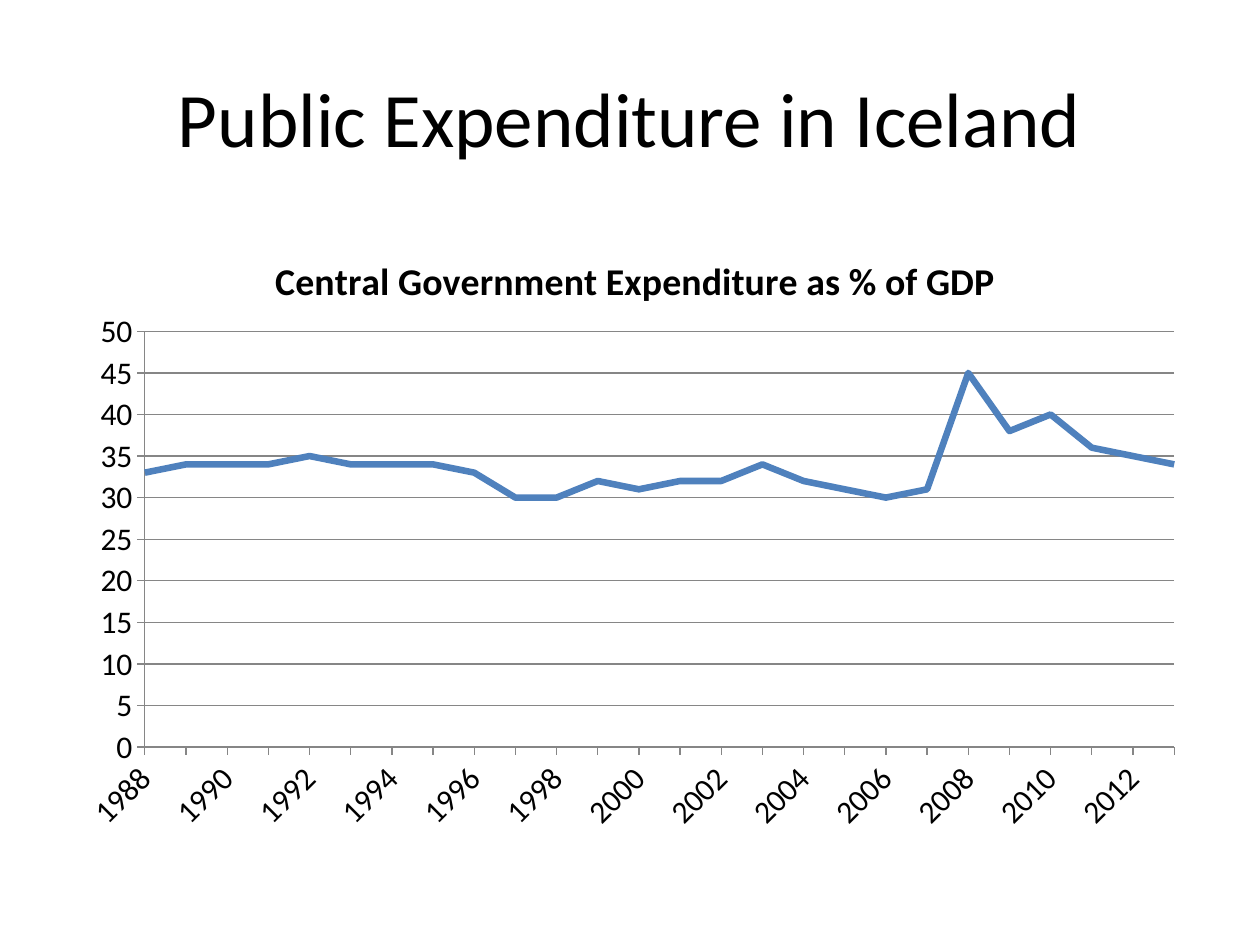
from pptx import Presentation
from pptx.chart.data import CategoryChartData
from pptx.dml.color import RGBColor
from pptx.enum.chart import XL_CHART_TYPE as ChartType, XL_TICK_MARK as Tick
from pptx.enum.text import MSO_ANCHOR, PP_ALIGN
from pptx.oxml import parse_xml
from pptx.oxml.ns import nsdecls, qn
from pptx.util import Inches, Pt

FONT = "Calibri"
BLACK = RGBColor(0x00, 0x00, 0x00)
BLUE = RGBColor(0x4F, 0x81, 0xBD)
GRAY = RGBColor(0x86, 0x86, 0x86)
FIRST_YEAR = 1988
EXPENDITURE = (
    33, 34, 34, 34, 35, 34, 34, 34, 33, 30, 30, 32, 31,
    32, 32, 34, 32, 31, 30, 31, 45, 38, 40, 36, 35, 34,
)
CHART_LEFT, CHART_TOP = 0.5, 1.75
CHART_WIDTH, CHART_HEIGHT = 9, 4.95


def style_font(font, size: float, bold: bool = False) -> None:
    font.name = FONT
    font.size = Pt(size)
    font.bold = bold
    font.color.rgb = BLACK


def style_line(line, color: RGBColor, width: float) -> None:
    line.color.rgb = color
    line.width = Pt(width)


def add_title(slide, text: str) -> None:
    box = slide.shapes.add_textbox(Inches(0.5), Inches(0.3), Inches(9), Inches(1.25))
    tf = box.text_frame
    tf.word_wrap = True
    tf.vertical_anchor = MSO_ANCHOR.MIDDLE
    p = tf.paragraphs[0]
    p.text = text
    p.alignment = PP_ALIGN.CENTER
    style_font(p.runs[0].font, 44)


def style_axis(axis) -> None:
    axis.major_tick_mark = Tick.OUTSIDE
    axis.minor_tick_mark = Tick.NONE
    style_font(axis.tick_labels.font, 18)
    style_line(axis.format.line, GRAY, 0.75)


def place_plot(plot_area, left: float, top: float, width: float, height: float) -> None:
    parts = {
        "x": (left - CHART_LEFT) / CHART_WIDTH,
        "y": (top - CHART_TOP) / CHART_HEIGHT,
        "w": width / CHART_WIDTH,
        "h": height / CHART_HEIGHT,
    }
    modes = "".join(f'<c:{key}Mode val="edge"/>' for key in "xy")
    values = "".join(f'<c:{key} val="{value:.4f}"/>' for key, value in parts.items())
    layout = parse_xml(
        f'<c:layout {nsdecls("c")}><c:manualLayout><c:layoutTarget val="inner"/>'
        f"{modes}{values}</c:manualLayout></c:layout>"
    )
    for old in plot_area.findall(qn("c:layout")):
        plot_area.remove(old)
    plot_area.insert(0, layout)


def place_title(title, left: float, top: float) -> None:
    x = (left - CHART_LEFT) / CHART_WIDTH
    y = (top - CHART_TOP) / CHART_HEIGHT
    layout = parse_xml(
        f'<c:layout {nsdecls("c")}><c:manualLayout>'
        '<c:xMode val="edge"/><c:yMode val="edge"/>'
        f'<c:x val="{x:.4f}"/><c:y val="{y:.4f}"/></c:manualLayout></c:layout>'
    )
    for old in title.findall(qn("c:layout")):
        title.remove(old)
    title.find(qn("c:tx")).addnext(layout)


def add_expenditure_chart(slide) -> None:
    data = CategoryChartData()
    data.categories = [str(FIRST_YEAR + i) for i in range(len(EXPENDITURE))]
    data.add_series("Series 1", EXPENDITURE)
    chart = slide.shapes.add_chart(
        ChartType.LINE, Inches(CHART_LEFT), Inches(CHART_TOP),
        Inches(CHART_WIDTH), Inches(CHART_HEIGHT), data,
    ).chart
    style_font(chart.font, 18)
    chart.has_legend = False
    chart.has_title = True
    title = chart.chart_title
    title.include_in_layout = False
    tf = title.text_frame
    tf.text = "Central Government Expenditure as % of GDP"
    style_font(tf.paragraphs[0].runs[0].font, 21.6, bold=True)
    place_title(title._element, 2.13, 1.96)

    plot = chart.plots[0]
    plot.vary_by_categories = False
    series = plot.series[0]
    series.smooth = False
    style_line(series.format.line, BLUE, 3.75)

    years, percent = chart.category_axis, chart.value_axis
    for axis in (years, percent):
        style_axis(axis)
    years.has_major_gridlines = False
    percent.minimum_scale, percent.maximum_scale, percent.major_unit = 0, 50, 5
    percent.has_major_gridlines = True
    style_line(percent.major_gridlines.format.line, GRAY, 0.75)

    cross = percent._element.find(qn("c:crossBetween"))
    if cross is None:
        cross = parse_xml(f'<c:crossBetween {nsdecls("c")}/>')
        percent._element.find(qn("c:majorUnit")).addprevious(cross)
    cross.set("val", "midCat")
    place_plot(years._element.getparent(), 1.15, 2.63, 8.17, 3.3)


def main() -> None:
    prs = Presentation()
    prs.slide_width, prs.slide_height = Inches(10), Inches(7.5)
    slide = prs.slides.add_slide(prs.slide_layouts[6])
    add_title(slide, "Public Expenditure in Iceland")
    add_expenditure_chart(slide)
    prs.save("out.pptx")


if __name__ == "__main__":
    main()
